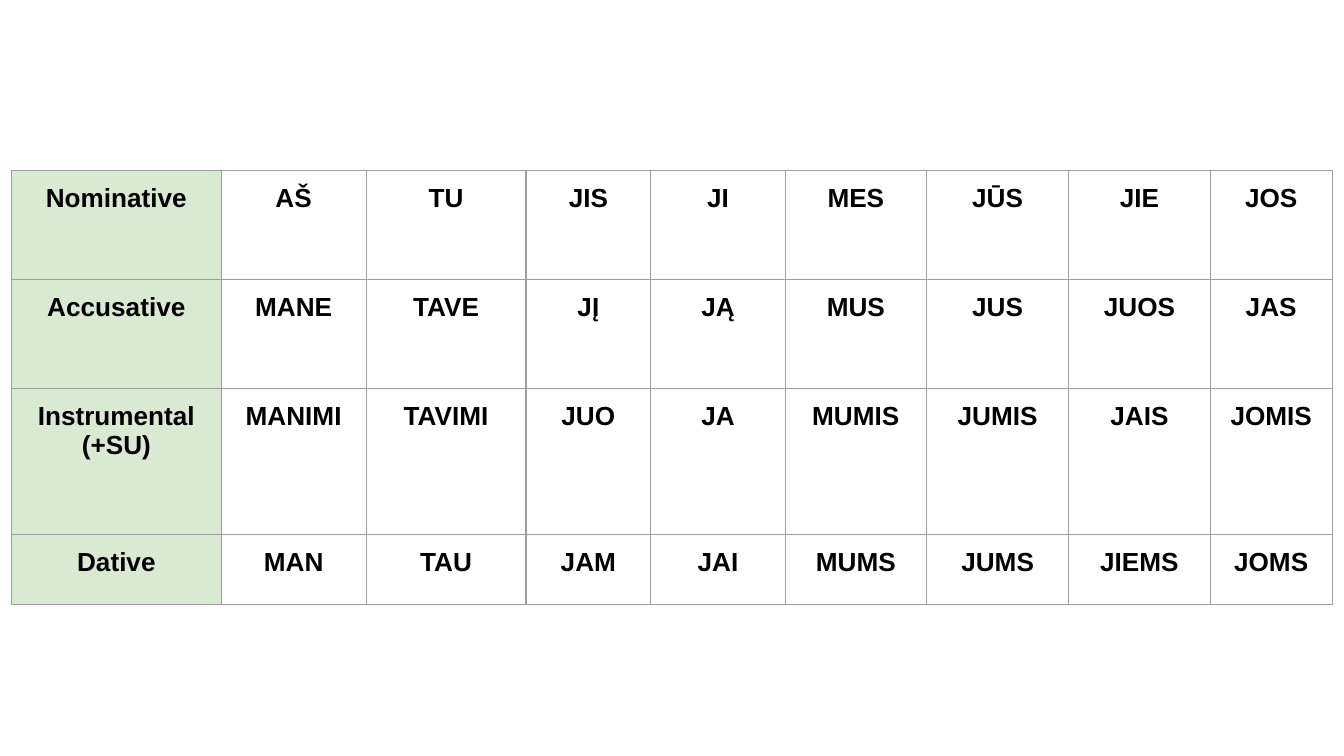
from lxml import etree
from pptx import Presentation
from pptx.dml.color import RGBColor
from pptx.enum.text import MSO_ANCHOR, PP_ALIGN
from pptx.oxml.ns import qn
from pptx.util import Cm, Pt

CENTER = PP_ALIGN.CENTER
TOP = MSO_ANCHOR.TOP

CASES = [
    ["Nominative", "AŠ", "TU", "JIS", "JI", "MES", "JŪS", "JIE", "JOS"],
    ["Accusative", "MANE", "TAVE", "JĮ", "JĄ", "MUS", "JUS", "JUOS", "JAS"],
    ["Instrumental (+SU)", "MANIMI", "TAVIMI", "JUO", "JA", "MUMIS", "JUMIS", "JAIS", "JOMIS"],
    ["Dative", "MAN", "TAU", "JAM", "JAI", "MUMS", "JUMS", "JIEMS", "JOMS"],
]
COLUMN_WIDTHS = [3.96, 2.74, 3.02, 2.36, 2.54, 2.67, 2.69, 2.67, 2.31]
ROW_HEIGHTS = [2.06, 2.06, 2.77, 1.32]


def color(value):
    return RGBColor.from_string(value)


def write(frame, text, *, font, size, ink, bold=False, align=CENTER):
    para = frame.paragraphs[0]
    para.alignment = align
    span = para.add_run()
    span.text = text
    span.font.name = font
    span.font.size = Pt(size)
    span.font.bold = bold
    span.font.color.rgb = color(ink)


class PronounSlide:
    font = "Arial"
    size = 14
    ink = "000000"
    label_fill = "D9EAD3"
    border = "9E9E9E"
    border_width = 0.75
    padding = 0.25

    def __init__(self, deck):
        self.page = deck.slides.add_slide(deck.slide_layouts[6])

    def add_table(self, left, top, widths, heights, rows):
        frame = self.page.shapes.add_table(
            len(rows), len(widths), Cm(left), Cm(top), Cm(sum(widths)), Cm(sum(heights)))
        table = frame.table
        table.first_row = table.horz_banding = False
        for column, width in zip(table.columns, widths):
            column.width = Cm(width)
        for row, height, texts in zip(table.rows, heights, rows):
            row.height = Cm(height)
            for index, (cell, text) in enumerate(zip(row.cells, texts)):
                self.style_cell(cell, self.label_fill if index == 0 else None)
                write(cell.text_frame, text, font=self.font, size=self.size,
                      ink=self.ink, bold=True)

    def style_cell(self, cell, fill):
        cell.margin_left = cell.margin_right = Cm(self.padding)
        cell.margin_top = cell.margin_bottom = Cm(self.padding)
        cell.vertical_anchor = TOP
        if fill:
            cell.fill.solid()
            cell.fill.fore_color.rgb = color(fill)
        else:
            cell.fill.background()
        self.add_borders(cell)

    def add_borders(self, cell):
        """Outline all four sides; the schema wants borders ahead of the fill."""
        properties = cell._tc.get_or_add_tcPr()
        for index, side in enumerate(("a:lnL", "a:lnR", "a:lnT", "a:lnB")):
            line = etree.Element(qn(side), w=str(Pt(self.border_width)))
            solid = etree.SubElement(line, qn("a:solidFill"))
            etree.SubElement(solid, qn("a:srgbClr"), val=self.border)
            properties.insert(index, line)


def main():
    deck = Presentation()
    deck.slide_width = Cm(25.4)
    deck.slide_height = Cm(14.29)
    slide = PronounSlide(deck)
    slide.add_table(0.22, 3.22, COLUMN_WIDTHS, ROW_HEIGHTS, CASES)
    deck.save("out.pptx")


if __name__ == "__main__":
    main()
